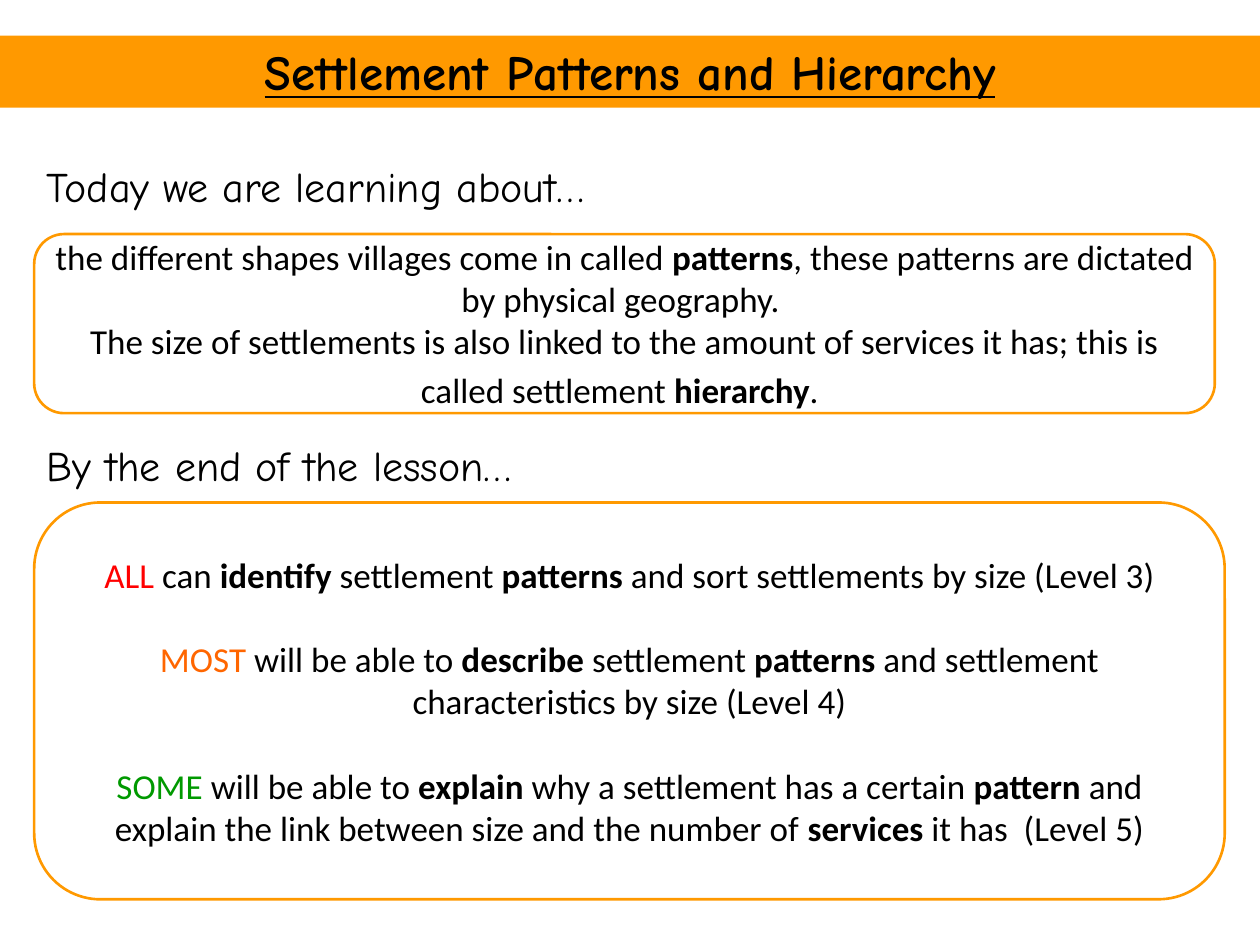
from dataclasses import dataclass

from pptx import Presentation
from pptx.dml.color import RGBColor
from pptx.enum.shapes import MSO_SHAPE
from pptx.enum.text import MSO_ANCHOR, PP_ALIGN
from pptx.util import Cm, Pt


@dataclass(frozen=True)
class Theme:
    """Colours, fonts and sizes of the lesson slide."""
    accent: str = "FF9900"
    ink: str = "000000"
    everyone: str = "FF0000"
    most: str = "FF6600"
    some: str = "009900"
    heading_font: str = "Comic Neue"
    body_font: str = "Calibri"
    title_size: int = 28
    heading_size: int = 24
    body_size: int = 20
    goal_gap: float = 24.4
    outline: float = 1.5


class LessonSlide:
    """Draws lesson elements on one slide in one theme."""

    def __init__(self, slide, theme):
        self.slide = slide
        self.theme = theme

    def add_run(self, paragraph, text, color=None, **formats):
        run = paragraph.add_run()
        run.text = text
        for name, value in formats.items():
            setattr(run.font, name, value)
        run.font.color.rgb = RGBColor.from_string(color or self.theme.ink)

    def add_box(self, preset, *place):
        shape = self.slide.shapes.add_shape(preset, *map(Cm, place))
        shape.shadow.inherit = False
        shape.text_frame.word_wrap = True
        return shape

    def add_title(self, text, *place):
        shape = self.add_box(MSO_SHAPE.RECTANGLE, *place)
        shape.fill.solid()
        shape.fill.fore_color.rgb = RGBColor.from_string(self.theme.accent)
        shape.line.fill.background()
        shape.text_frame.vertical_anchor = MSO_ANCHOR.TOP
        paragraph = shape.text_frame.paragraphs[0]
        paragraph.alignment = PP_ALIGN.CENTER
        self.add_run(paragraph, text, name=self.theme.heading_font,
                     size=Pt(self.theme.title_size), bold=True, underline=True)

    def add_heading(self, text, *place):
        frame = self.slide.shapes.add_textbox(*map(Cm, place)).text_frame
        frame.word_wrap = True
        self.add_run(frame.paragraphs[0], text, name=self.theme.heading_font,
                     size=Pt(self.theme.heading_size))

    def add_panel(self, paragraphs, *place, gap=0):
        shape = self.add_box(MSO_SHAPE.ROUNDED_RECTANGLE, *place)
        shape.fill.background()
        shape.line.color.rgb = RGBColor.from_string(self.theme.accent)
        shape.line.width = Pt(self.theme.outline)
        frame = shape.text_frame
        frame.vertical_anchor = MSO_ANCHOR.MIDDLE
        for index, runs in enumerate(paragraphs):
            paragraph = frame.add_paragraph() if index else frame.paragraphs[0]
            paragraph.alignment = PP_ALIGN.CENTER
            if index:
                paragraph.space_before = Pt(gap)
            for text, changes in runs:
                formats = {"name": self.theme.body_font,
                           "size": Pt(self.theme.body_size), "bold": False}
                self.add_run(paragraph, text, **{**formats, **changes})


def main():
    theme = Theme()
    presentation = Presentation()
    presentation.slide_width, presentation.slide_height = Cm(25.4), Cm(19.05)
    lesson = LessonSlide(presentation.slides.add_slide(presentation.slide_layouts[6]), theme)
    plain, strong = {}, {"bold": True}
    left = 0.69

    topics = [
        [("the different shapes villages come in called ", plain), ("patterns", strong),
         (", these patterns are dictated by physical geography. ", plain)],
        [("The size of settlements is also linked to the amount of services it has; "
          "this is called settlement ", plain),
         ("hierarchy", strong), (".", plain), (" ", {"size": Pt(theme.heading_size)})],
    ]
    goals = [
        [("ALL", {"color": theme.everyone}), (" can ", plain), ("identify", strong),
         (" settlement ", plain), ("patterns ", strong),
         ("and sort settlements by size (Level 3)", plain)],
        [("MOST", {"color": theme.most}), (" will be able to ", plain), ("describe ", strong),
         ("settlement ", plain), ("patterns ", strong),
         ("and settlement characteristics by size (Level 4)", plain)],
        [("SOME", {"color": theme.some}), (" will be able to ", plain), ("explain", strong),
         (" why a settlement has a certain ", plain), ("pattern", strong),
         (" and explain the link between size and the number of ", plain),
         ("services", strong), (" it has  (Level 5)", plain)],
    ]

    lesson.add_heading("Today we are learning about…", left, 3.12, 14, 1.27)
    lesson.add_heading("By the end of the lesson…", left, 8.74, 14, 1.27)
    lesson.add_title("Settlement Patterns and Hierarchy", 0, 0.72, 25.4, 1.45)
    lesson.add_panel(topics, left, 4.72, 23.8, 3.61)
    lesson.add_panel(goals, left, 10.13, 24, 8, gap=theme.goal_gap)
    presentation.save("out.pptx")


if __name__ == "__main__":
    main()
